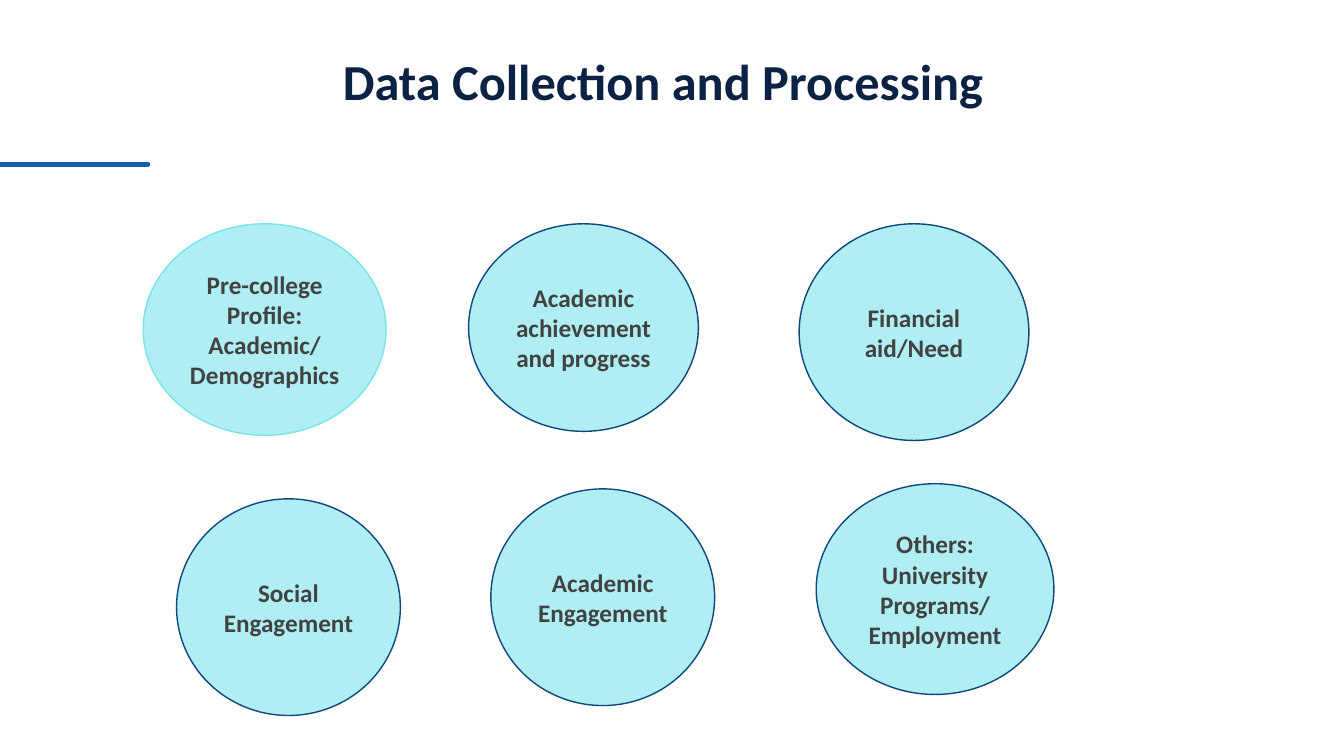
from lxml.etree import SubElement
from pptx import Presentation
from pptx.dml.color import RGBColor
from pptx.enum.shapes import MSO_CONNECTOR as Connector, MSO_SHAPE as Shape
from pptx.enum.text import MSO_ANCHOR as Anchor, PP_ALIGN as Align
from pptx.oxml.ns import qn
from pptx.util import Cm, Pt


def color(hex_value):
    return RGBColor.from_string(hex_value)


def add_bold_run(paragraph, text, size, hex_value):
    paragraph.alignment = Align.CENTER
    run = paragraph.add_run()
    run.text = text
    run.font.name = "Calibri"
    run.font.size = Pt(size)
    run.font.bold = True
    run.font.color.rgb = color(hex_value)


prs = Presentation()
prs.slide_width, prs.slide_height = Cm(33.87), Cm(19.05)
slide = prs.slides.add_slide(prs.slide_layouts[5])

# Accent line with rounded end
accent = slide.shapes.add_connector(Connector.STRAIGHT, 0, Cm(4.14), Cm(3.73), Cm(4.14))
accent.line.color.rgb = color("1460AA")
accent.line.width = Pt(3.25)
accent.line._get_or_add_ln().set("cap", "rnd")
SubElement(accent._element.spPr, qn("a:effectLst"))

# Title
title = slide.shapes.title
title.left, title.top, title.width, title.height = Cm(2.11), Cm(1.02), Cm(29.21), Cm(2.21)
title.text_frame.vertical_anchor = Anchor.MIDDLE
heading = title.text_frame.paragraphs[0]
heading.line_spacing = 0.9
add_bold_run(heading, "Data Collection and Processing", 36, "0C2244")

# Data categories: left, top, width, height in cm, outline, paragraphs
NAVY, AQUA = "0F477E", "79E3E9"
categories = [
    (3.61, 5.64, 6.12, 5.33, AQUA, ["Pre-college Profile:", "Academic/ Demographics"]),
    (11.81, 5.64, 5.79, 5.23, NAVY, ["Academic achievement and progress"]),
    (20.14, 5.64, 5.79, 5.46, NAVY, ["Financial aid/Need"]),
    (4.45, 12.57, 5.64, 5.46, NAVY, ["Social Engagement"]),
    (12.37, 12.32, 5.64, 5.46, NAVY, ["Academic Engagement"]),
    (20.57, 12.19, 5.99, 5.31, NAVY, ["Others: University Programs/", "Employment"]),
]
for left, top, width, height, outline, lines in categories:
    category = slide.shapes.add_shape(Shape.OVAL, Cm(left), Cm(top), Cm(width), Cm(height))
    category.shadow.inherit = False
    category.fill.solid()
    category.fill.fore_color.rgb = color("AFEEF2")
    category.line.color.rgb = color(outline)
    category.line.width = Pt(1)
    label = category.text_frame
    label.word_wrap = True
    label.vertical_anchor = Anchor.MIDDLE
    for index, text in enumerate(lines):
        paragraph = label.add_paragraph() if index else label.paragraphs[0]
        add_bold_run(paragraph, text, 18, "424242")

prs.save("out.pptx")
